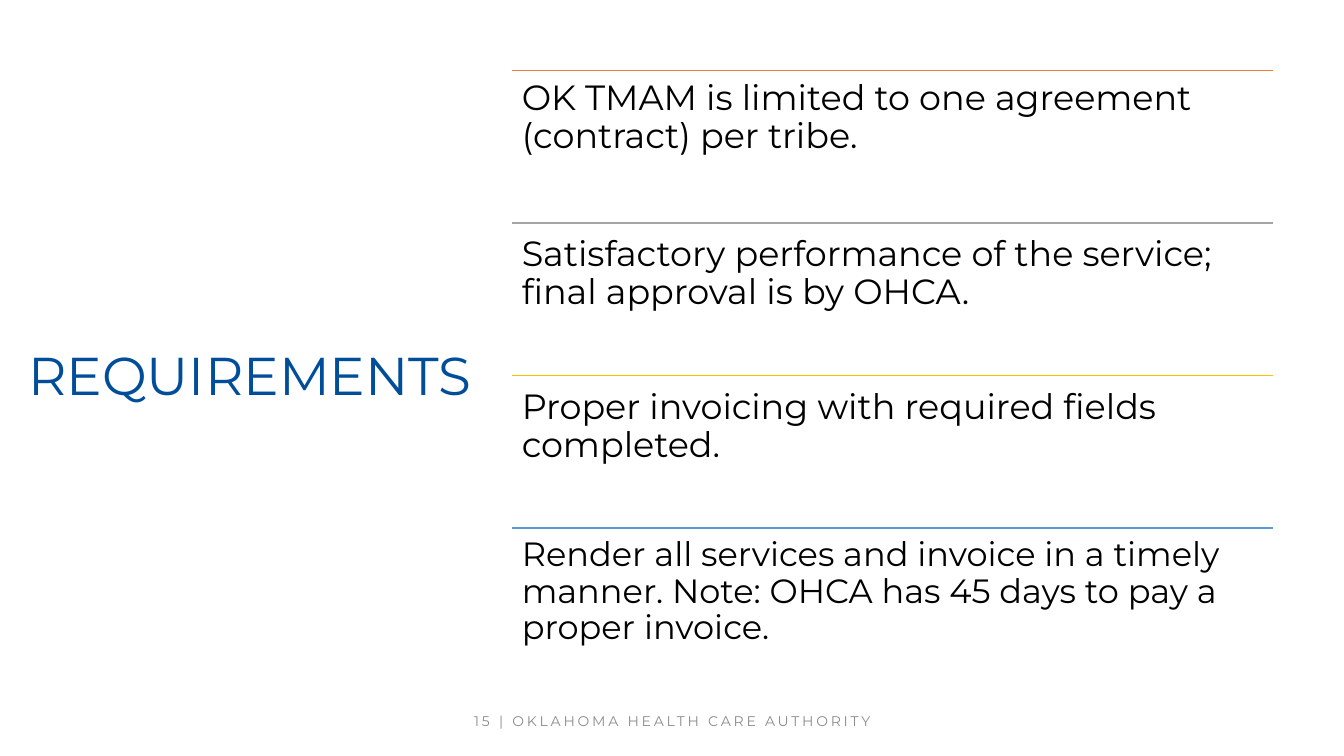
from lxml import etree
from pptx import Presentation
from pptx import util as u
from pptx.dml.color import RGBColor
from pptx.enum import shapes, text
from pptx.oxml.ns import qn

INK = {
    "title": "004E9A", "body": "000000", "foot": "8C8C8C",
    "orange": "ED7D31", "grey": "A5A5A5", "gold": "FFC000", "blue": "5B9BD5",
}
LEFT, TOP, WIDTH, PITCH = 12.9, 1.78, 19.18, 3.84

# rule colour, drop of the text below its rule in cm, size in points, wording
RULES = [
    ("orange", 0, 25, "OK TMAM is limited to one agreement (contract) per tribe."),
    ("grey", 0.08, 25,
     "Satisfactory performance of the service; final approval is by OHCA."),
    ("gold", 0.1, 25, "Proper invoicing with required fields completed."),
    ("blue", 0, 24,
     "Render all services and invoice in a timely manner. "
     "Note: OHCA has 45 days to pay a proper invoice."),
]


class Page:
    font = "Montserrat"

    def __init__(self, slide):
        self.slide = slide

    def label(self, words, box, size, ink, anchor=text.MSO_ANCHOR.MIDDLE,
              align=text.PP_ALIGN.LEFT, pad=(0.25, 0.13), lead=0.9, track=0):
        """Add a text box; pad is side and top inset in cm, track is in points."""
        frame = self.slide.shapes.add_textbox(*map(u.Cm, box)).text_frame
        frame.word_wrap = True
        frame.vertical_anchor = anchor
        frame.margin_left = frame.margin_right = u.Cm(pad[0])
        frame.margin_top = frame.margin_bottom = u.Cm(pad[1])
        frame.text = words
        para = frame.paragraphs[0]
        para.alignment = align
        para.line_spacing = lead
        font = para.runs[0].font
        font.name = self.font
        font.size = u.Pt(size)
        font.color.rgb = RGBColor.from_string(INK[ink])
        if track:
            para.runs[0]._r.get_or_add_rPr().set("spc", str(track * 100))

    def rule(self, left, top, width, ink):
        line = self.slide.shapes.add_connector(
            shapes.MSO_CONNECTOR.STRAIGHT,
            u.Cm(left), u.Cm(top), u.Cm(left + width), u.Cm(top))
        line.line.color.rgb = RGBColor.from_string(INK[ink])
        line.line.width = u.Pt(1)
        etree.SubElement(line._element.spPr, qn("a:effectLst"))


def main():
    deck = Presentation()
    deck.slide_width, deck.slide_height = u.Cm(33.87), u.Cm(19.05)
    page = Page(deck.slides.add_slide(deck.slide_layouts[6]))

    page.label("15 | OKLAHOMA HEALTH CARE AUTHORITY", (2.34, 17.65, 29.21, 1.02),
               10, "foot", align=text.PP_ALIGN.CENTER, lead=1.0, track=2)
    page.label("REQUIREMENTS", (0.46, TOP, 12.01, 15.52), 38, "title")

    for row, (ink, drop, size, words) in enumerate(RULES):
        top = TOP + row * PITCH
        page.rule(LEFT, top, WIDTH, ink)
        page.label(words, (LEFT, top + drop, WIDTH, PITCH), size, "body",
                   anchor=text.MSO_ANCHOR.TOP, pad=(0.25, 0.25))

    deck.save("out.pptx")


if __name__ == "__main__":
    main()
